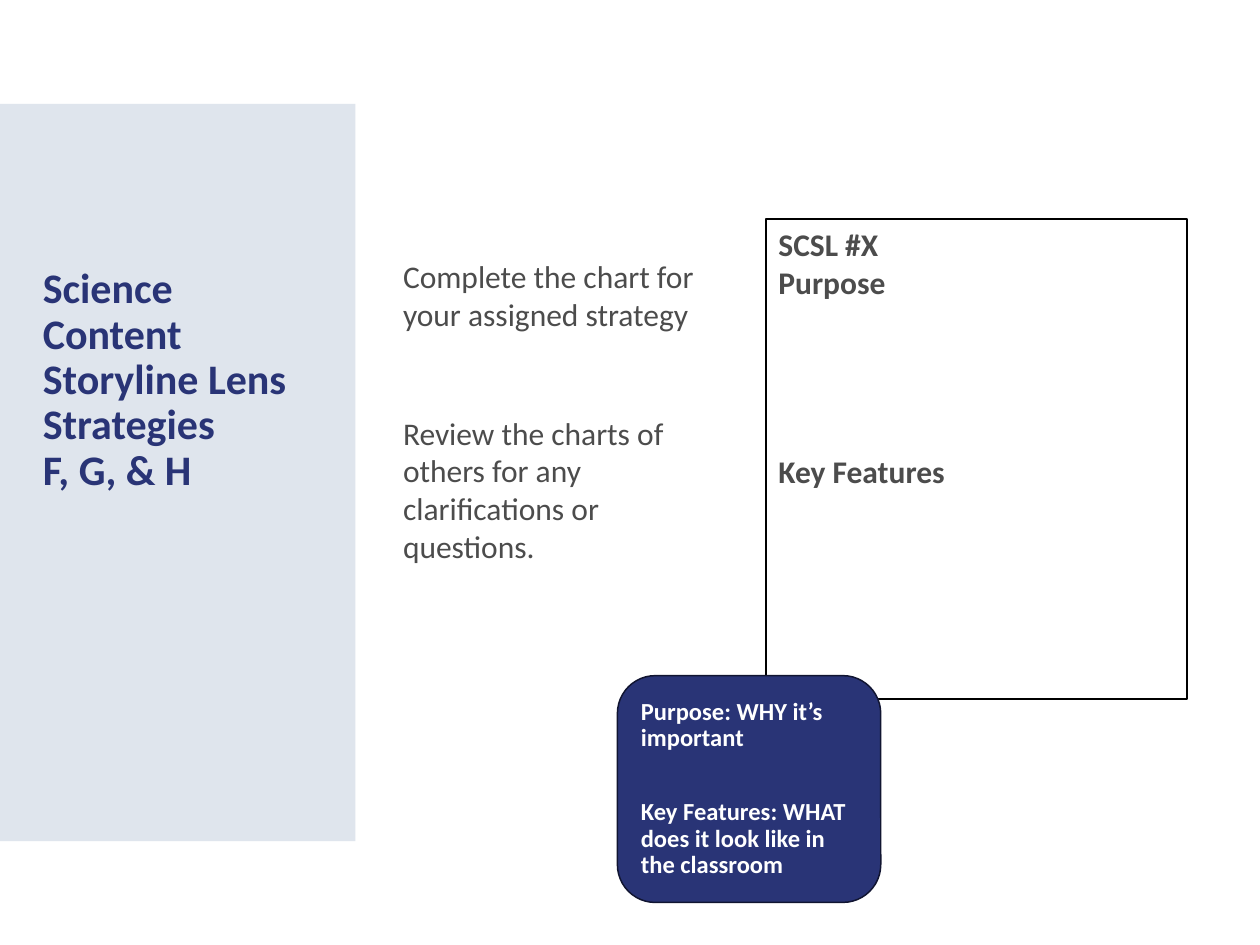
from pptx import Presentation
from pptx import util as u
from pptx.dml import color
from pptx.enum import shapes, text

WIDTH, HEIGHT = 10, 7.5
NAVY, NAVY_EDGE, PALE, GREY = "293476", "111531", "DFE5ED", "4C4C4C"
BLACK, WHITE = "000000", "FFFFFF"


def rgb(value):
    return color.RGBColor.from_string(value)


def place(part, box):
    """Set a part's left, top, width and height, in inches."""
    for side, length in zip(("left", "top", "width", "height"), box):
        setattr(part, side, u.Inches(length))


def within(box, left, top, width, height):
    """Turn shares of a box into a box in inches."""
    x, y, w, h = box
    return x + left * w, y + top * h, width * w, height * h


def write(part, lines, gaps, size, ink, bold, anchor, spacing=1.0):
    """Fill a part with paragraphs; gaps are the points before each one."""
    frame = part.text_frame
    frame.text = "\n".join(lines)
    frame_format = {"word_wrap": True, "auto_size": text.MSO_AUTO_SIZE.NONE,
                    "vertical_anchor": anchor}
    for name, value in frame_format.items():
        setattr(frame, name, value)
    font_format = {"name": "Calibri", "size": u.Pt(size), "bold": bold}
    for paragraph, gap in zip(frame.paragraphs, gaps):
        paragraph.alignment = text.PP_ALIGN.LEFT
        paragraph.line_spacing = spacing
        if gap:
            paragraph.space_before = u.Pt(gap)
        for run in paragraph.runs:
            for name, value in font_format.items():
                setattr(run.font, name, value)
            run.font.color.rgb = rgb(ink)


def add_panel(slide, kind, box, fill=None, edge=None, edge_width=0):
    panel = slide.shapes.add_shape(kind, 0, 0, 0, 0)
    place(panel, box)
    panel.shadow.inherit = False
    if fill:
        panel.fill.solid()
        panel.fill.fore_color.rgb = rgb(fill)
    else:
        panel.fill.background()
    if edge:
        panel.line.color.rgb = rgb(edge)
        panel.line.width = u.Pt(edge_width)
    else:
        panel.line.fill.background()
    return panel


def add_sidebar(slide, box):
    """Pale band with the slide title."""
    band = add_panel(slide, shapes.MSO_SHAPE.RECTANGLE, box, PALE)
    title = slide.shapes.title
    band._element.addnext(title._element)  # title in front of its band
    place(title, within(box, 0.085, 0.156, 0.826, 0.382))
    write(title, ["Science Content Storyline Lens Strategies\vF, G, & H"],
          [0], 24, NAVY, True, text.MSO_ANCHOR.BOTTOM, 0.9)


def add_chart_frame(slide, box):
    """Outlined blank chart to be completed."""
    frame = add_panel(slide, shapes.MSO_SHAPE.RECTANGLE, box,
                      edge=BLACK, edge_width=1.25)
    write(frame, ["SCSL #X", "Purpose", "Key Features"], [0, 0, 86.5],
          18, GREY, True, text.MSO_ANCHOR.TOP)


def add_hint(slide, box):
    """Rounded note explaining the chart headings."""
    hint = add_panel(slide, shapes.MSO_SHAPE.ROUNDED_RECTANGLE, box,
                     NAVY, NAVY_EDGE, 0.85)
    write(hint, ["Purpose: WHY it’s important",
                 "Key Features: WHAT does it look like in the classroom"],
          [0, 27], 14, WHITE, True, text.MSO_ANCHOR.MIDDLE, 0.9)


def add_tasks(slide, box):
    """Instructions for the group."""
    tasks = slide.shapes.add_textbox(0, 0, 0, 0)
    place(tasks, box)
    write(tasks, ["Complete the chart for your assigned strategy",
                  "Review the charts of others for any clarifications "
                  "or questions."],
          [0, 46], 18, GREY, False, text.MSO_ANCHOR.MIDDLE)


def main():
    deck = Presentation()
    deck.slide_width, deck.slide_height = u.Inches(WIDTH), u.Inches(HEIGHT)
    slide = deck.slides.add_slide(deck.slide_layouts[5])
    page = (0, 0, WIDTH, HEIGHT)

    add_sidebar(slide, within(page, 0, 0.11, 0.282, 0.78))
    add_chart_frame(slide, within(page, 0.608, 0.232, 0.334, 0.508))
    add_hint(slide, within(page, 0.49, 0.715, 0.209, 0.24))
    add_tasks(slide, within(page, 0.31, 0.117, 0.285, 0.636))
    deck.save("out.pptx")


if __name__ == "__main__":
    main()
